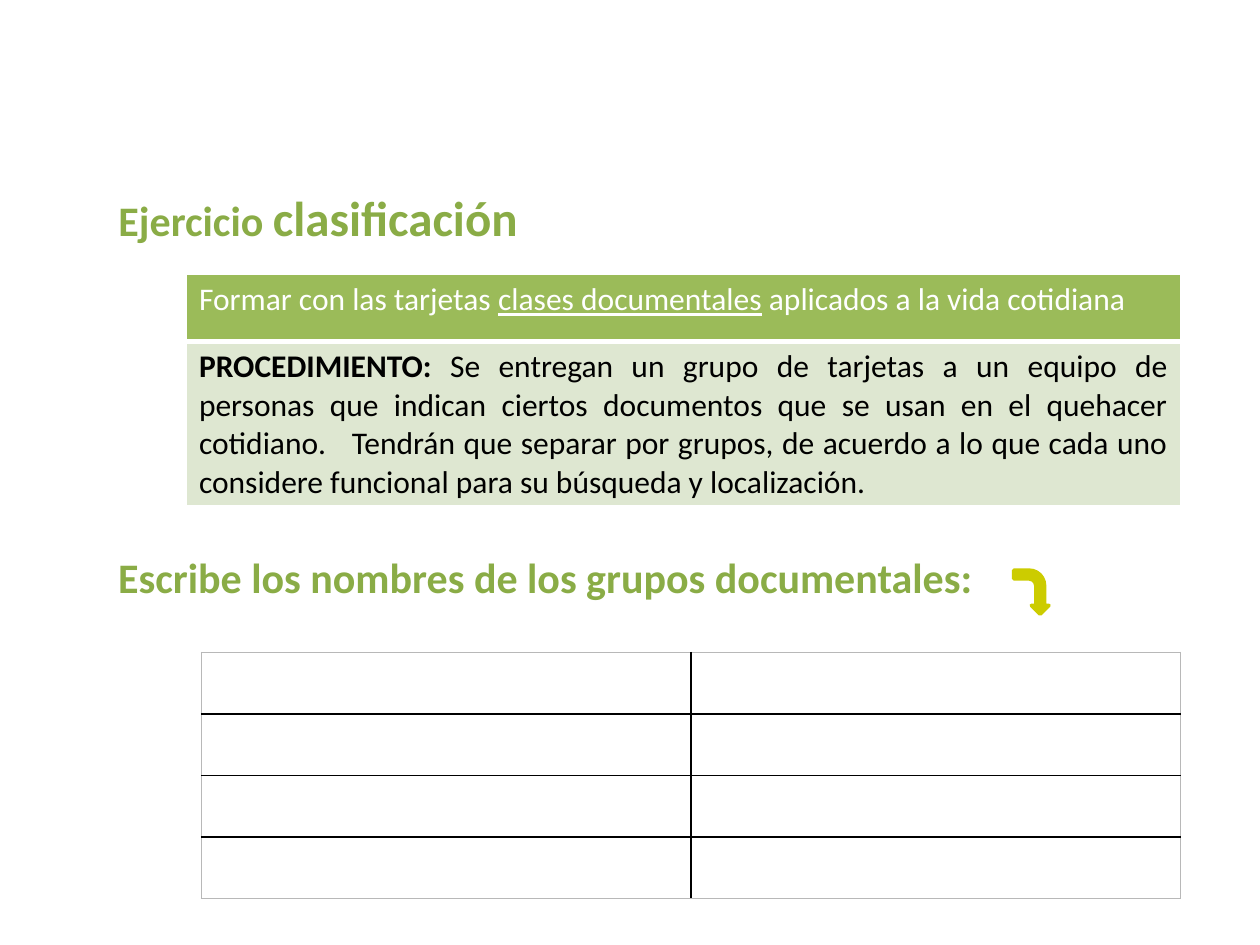
from lxml.etree import SubElement
from pptx import Presentation
from pptx.dml.color import RGBColor as RGB
from pptx.enum.shapes import MSO_SHAPE as SHAPE
from pptx.enum.text import MSO_ANCHOR as ANCHOR, MSO_AUTO_SIZE as AUTO, PP_ALIGN as ALIGN
from pptx.oxml.ns import qn
from pptx.util import Inches, Pt

COLORS = {
    "heading": "8AAC46", "header": "9BBB59", "body": "DEE7D1", "arrow": "CCCC00",
    "white": "FFFFFF", "black": "000000", "frame": "B8B8B8",
}
FONT = "Calibri"


def rgb(name):
    """Return the named colour."""
    return RGB.from_string(COLORS[name])


def add_runs(p, runs, color):
    """Add (text, size, bold, underline) runs to a paragraph."""
    for text, size, bold, underline in runs:
        r = p.add_run()
        r.text = text
        f = r.font
        f.name, f.size, f.bold, f.underline = FONT, Pt(size), bold, underline
        f.color.rgb = rgb(color)


def fill_heading(sp, box, runs):
    """Place a heading and write its runs."""
    sp.left, sp.top, sp.width, sp.height = map(Inches, box)
    tf = sp.text_frame
    tf.word_wrap = False
    tf.auto_size = AUTO.SHAPE_TO_FIT_TEXT
    tf.vertical_anchor = ANCHOR.TOP
    p = tf.paragraphs[0]
    p.alignment = ALIGN.LEFT
    p.line_spacing = 1.0
    p.space_before = Pt(0)
    add_runs(p, runs, "heading")


def set_borders(cell, left, right, top, bottom):
    """Draw the four cell borders, each a (colour, width) pair."""
    tcPr = cell._tc.get_or_add_tcPr()
    for side, (color, width) in zip("LRTB", (left, right, top, bottom)):
        ln = SubElement(tcPr, qn(f"a:ln{side}"), w=str(Pt(width)))
        fill = SubElement(ln, qn("a:solidFill"))
        SubElement(fill, qn("a:srgbClr"), val=COLORS[color])


def add_plain_table(s, rows, cols, box):
    """Add a table with no header or banding."""
    table = s.shapes.add_table(rows, cols, *map(Inches, box)).table
    table.first_row = table.horz_banding = False
    return table


def add_instructions(s):
    """Add the task table."""
    table = add_plain_table(s, 2, 1, (1.48, 2.18, 7.89, 1.74))
    thin, thick = ("white", 1), ("white", 3)
    rows = [
        (0.53, "header", "white", thin, thick, [
            ("Formar con las tarjetas ", 18, False, False),
            ("clases documentales", 18, False, True),
            (" aplicados a la vida cotidiana", 18, False, False)]),
        (1.21, "body", "black", thick, thin, [
            ("PROCEDIMIENTO:", 18, True, False),
            (" Se entregan un grupo de tarjetas a un equipo de personas que indican "
             "ciertos documentos que se usan en el quehacer cotidiano.   Tendrán que "
             "separar por grupos, de acuerdo a lo que cada uno considere funcional "
             "para su búsqueda y localización.", 18, False, False)]),
    ]
    for i, (height, fill, color, top, bottom, runs) in enumerate(rows):
        table.rows[i].height = Inches(height)
        cell = table.cell(i, 0)
        set_borders(cell, thin, thin, top, bottom)
        cell.fill.solid()
        cell.fill.fore_color.rgb = rgb(fill)
        p = cell.text_frame.paragraphs[0]
        p.alignment = ALIGN.JUSTIFY
        add_runs(p, runs, color)


def add_answer_grid(s, rows=4, cols=2):
    """Add the empty grid for the group names."""
    table = add_plain_table(s, rows, cols, (1.6, 5.18, 7.77, 1.95))
    frame, inner = ("frame", 1), ("black", 1)
    for i in range(rows):
        for j in range(cols):
            cell = table.cell(i, j)
            edges = (j == 0, j == cols - 1, i == 0, i == rows - 1)
            set_borders(cell, *(frame if edge else inner for edge in edges))
            cell.fill.background()


def add_arrow(s):
    """Add the bent arrow that points to the grid."""
    sp = s.shapes.add_shape(SHAPE.BENT_ARROW, *map(Inches, (8.01, 4.56, 0.35, 0.28)))
    sp.rotation = 90
    sp.shadow.inherit = False
    sp.fill.solid()
    sp.fill.fore_color.rgb = sp.line.color.rgb = rgb("arrow")
    sp.line.width = Pt(2)


def main():
    """Build the slide and save it."""
    prs = Presentation()
    prs.slide_width, prs.slide_height = Inches(10), Inches(7.5)
    s = prs.slides.add_slide(prs.slide_layouts[5])
    fill_heading(s.shapes.title, (0.84, 1.44, 3.55, 0.57),
                 [("Ejercicio ", 24, True, False), ("clasificación", 28, True, False)])
    add_instructions(s)
    add_answer_grid(s)
    box = (0.84, 4.33, 7.3, 0.5)
    fill_heading(s.shapes.add_textbox(*map(Inches, box)), box,
                 [("Escribe los nombres de los grupos documentales:", 24, True, False)])
    add_arrow(s)
    prs.save("out.pptx")


if __name__ == "__main__":
    main()
